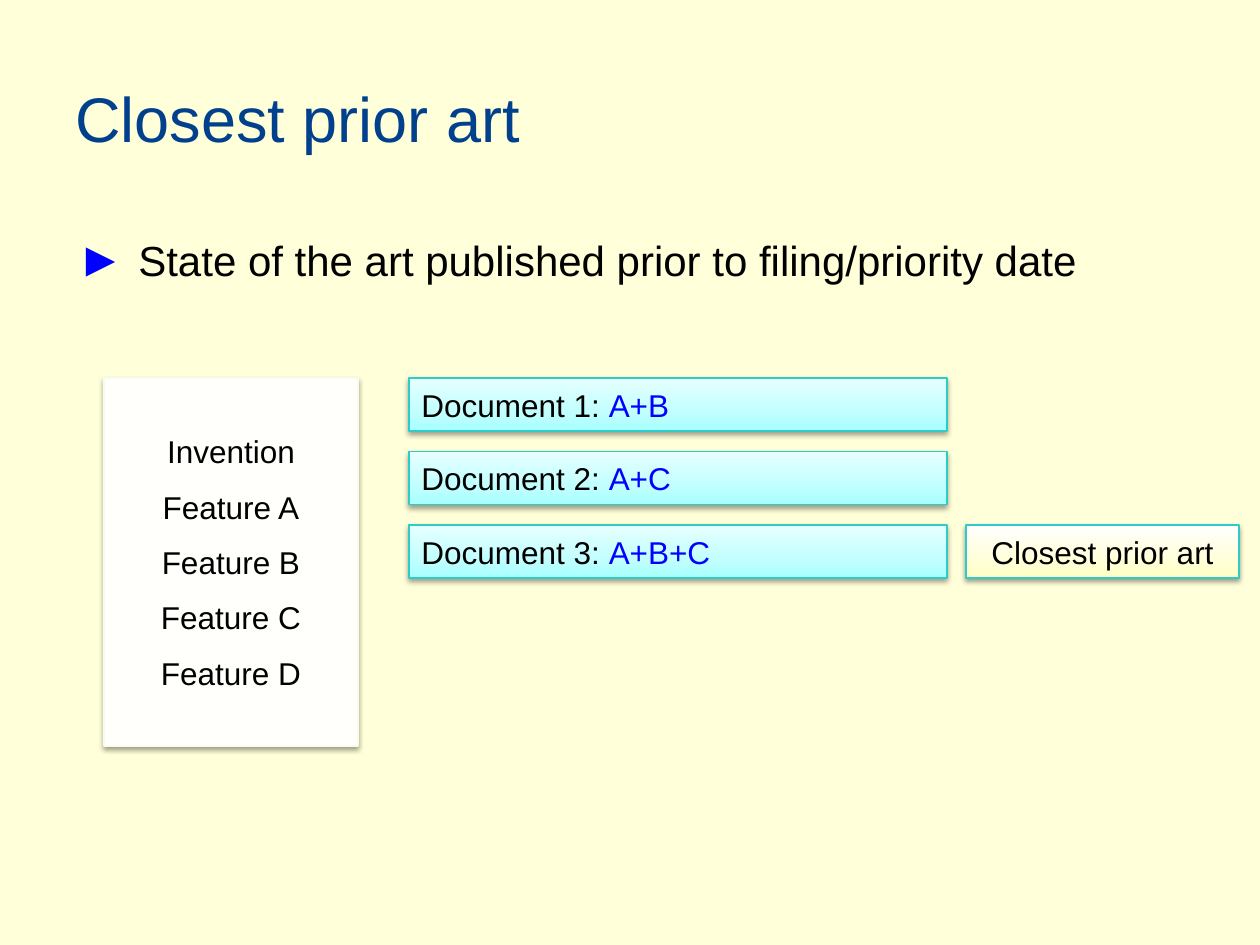
"""Build the slide that picks the closest prior art among three documents."""
import lxml.etree
import pptx
import pptx.dml.color
import pptx.enum.shapes
import pptx.enum.text
import pptx.oxml
import pptx.oxml.ns
import pptx.util

PX = 914400 / 126
COLORS = {"page": "FFFFD9", "title": "00408C", "accent": "0000FF", "ink": "000000",
          "edge": "2ECBCB", "card_edge": "FAFAF1"}
GRADIENTS = {
    "card": [(0, "FFFFFB"), (35, "FFFFFC"), (100, "FFFFFE")],
    "document": [(0, "A7FFFF"), (35, "C1FFFF"), (100, "E7FFFF")],
    "verdict": [(0, "FFFFC5"), (100, "FFFFFF")],
}

TITLE = "Closest prior art"
STATEMENT = "State of the art published prior to filing/priority date"
INVENTION = ["Invention", "Feature A", "Feature B", "Feature C", "Feature D"]
DOCUMENTS = [("Document 1: ", "A+B"), ("Document 2: ", "A+C"), ("Document 3: ", "A+B+C")]
VERDICT = "Closest prior art"

TOP = 378
DOCUMENT_LEFT, DOCUMENT_WIDTH = 409, 538
ROW_HEIGHT, ROW_STEP = 53, 147 / 2


def px(*lengths):
    return [round(length * PX) for length in lengths]


def rgb(name):
    return pptx.dml.color.RGBColor.from_string(COLORS[name])


def write(shape, paragraphs, anchor="MIDDLE", align="LEFT", gap=0):
    frame = shape.text_frame
    frame.word_wrap = True
    frame.vertical_anchor = pptx.enum.text.MSO_ANCHOR[anchor]
    for index, runs in enumerate(paragraphs):
        paragraph = frame.add_paragraph() if index else frame.paragraphs[0]
        paragraph.alignment = pptx.enum.text.PP_ALIGN[align]
        paragraph.space_before = pptx.util.Pt(gap if index else 0)
        for text, size, color in runs:
            run = paragraph.add_run()
            run.text = text
            run.font.name = "Arial"
            run.font.size = pptx.util.Pt(size)
            run.font.color.rgb = rgb(color)


def add_panel(slide, box, gradient, edge, paragraphs, **text_format):
    panel = slide.shapes.add_shape(pptx.enum.shapes.MSO_SHAPE.RECTANGLE, *px(*box))
    stops = "".join(f'<a:gs pos="{place * 1000}"><a:srgbClr val="{color}"/></a:gs>'
                    for place, color in GRADIENTS[gradient])
    namespace = pptx.oxml.ns.nsdecls("a")
    panel._element.spPr.append(pptx.oxml.parse_xml(
        f'<a:gradFill {namespace} rotWithShape="1"><a:gsLst>{stops}</a:gsLst>'
        '<a:lin ang="16200000" scaled="0"/></a:gradFill>'))
    panel.line.color.rgb = rgb(edge)
    panel.line.width = pptx.util.Pt(0.75)
    panel.shadow.inherit = False
    effects = panel._element.spPr.find(pptx.oxml.ns.qn("a:effectLst"))
    effects.append(lxml.etree.fromstring(
        f'<a:outerShdw {namespace} blurRad="39370" dist="20320" dir="5400000" rotWithShape="0">'
        f'<a:srgbClr val="{COLORS["ink"]}"><a:alpha val="38000"/></a:srgbClr></a:outerShdw>'))
    write(panel, paragraphs, **text_format)


def main():
    deck = pptx.Presentation()
    deck.slide_width, deck.slide_height = px(1260, 945)
    slide = deck.slides.add_slide(deck.slide_layouts[6])
    slide.background.fill.solid()
    slide.background.fill.fore_color.rgb = rgb("page")

    title = slide.shapes.add_textbox(*px(63, 38, 1134, 158))
    write(title, [[(TITLE, 36, "title")]])
    statement = slide.shapes.add_textbox(*px(64, 221, 1196, 600))
    write(statement, [[("► ", 28, "accent"), (STATEMENT, 24, "ink")]], anchor="TOP")

    add_panel(slide, (104, TOP, 254, 368), "card", "card_edge",
              [[(line, 18, "ink")] for line in INVENTION], align="CENTER", gap=10)
    for row, (label, features) in enumerate(DOCUMENTS):
        add_panel(slide, (DOCUMENT_LEFT, TOP + row * ROW_STEP, DOCUMENT_WIDTH, ROW_HEIGHT),
                  "document", "edge", [[(label, 18, "ink"), (features, 18, "accent")]])
    last_row = TOP + (len(DOCUMENTS) - 1) * ROW_STEP
    add_panel(slide, (966, last_row, 273, ROW_HEIGHT), "verdict", "edge",
              [[(VERDICT, 18, "ink")]], align="CENTER")
    deck.save("out.pptx")


if __name__ == "__main__":
    main()
